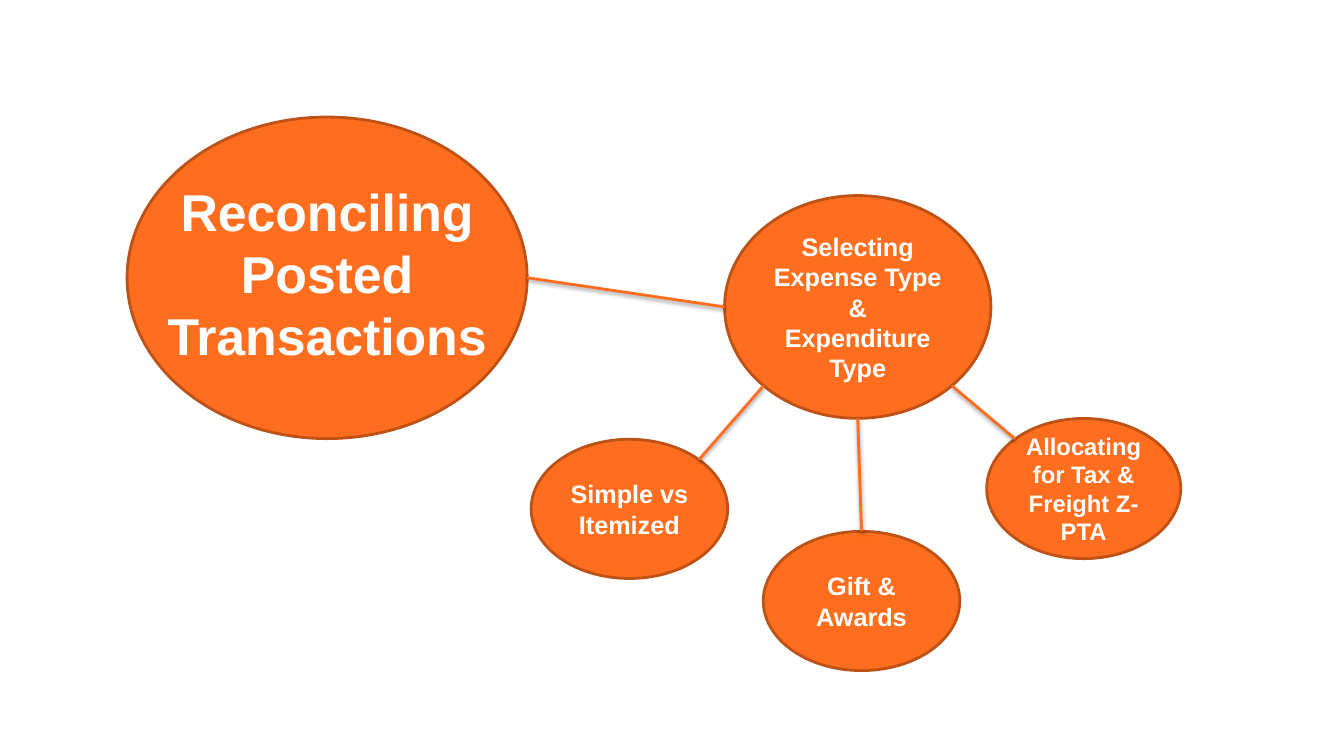
"""Build a bubble map of the steps for reconciling posted transactions."""
import math

import lxml.etree
import pptx
import pptx.dml.color
import pptx.enum.shapes
import pptx.enum.text
import pptx.oxml.ns
import pptx.util

TITLE = "Reconciling Posted Transactions"
TITLE_BOX = (110.2, 124.6, 247, 141.8)

BUBBLES = {
    "main": ("", (90.8, 83.6, 285.8, 229.7), "body"),
    "types": ("Selecting Expense Type & Expenditure Type", (517.6, 139.7, 190.2, 159.1), "body"),
    "itemized": ("Simple vs Itemized", (379.4, 313.8, 140.4, 99.4), "body"),
    "gifts": ("Gift & Awards", (545.2, 379.6, 140.4, 99.4), "body"),
    "allocating": ("Allocating for Tax & Freight Z-PTA", (704.8, 298.9, 138.6, 100.1), "small"),
}

LINKS = [
    ("main", "right", "types", "left"),
    ("types", "bottom left", "itemized", "top right"),
    ("types", "bottom right", "allocating", "top left"),
    ("gifts", "top", "types", "bottom"),
]

SITES = ["top", "top left", "left", "bottom left", "bottom", "bottom right", "right", "top right"]

THEME = {
    "font": "Arial",
    "fill": "FF6E1E",
    "outline": "BD5116",
    "text": "FFFFFF",
    "shadow": "000000",
    "line": 2,
    "sizes": {"title": 37, "body": 18, "small": 17},
}

Pt = pptx.util.Pt
qn = pptx.oxml.ns.qn


def color(name):
    return pptx.dml.color.RGBColor.from_string(THEME[name])


def write(tf, text, size, anchor):
    tf.word_wrap = True
    tf.vertical_anchor = anchor
    p = tf.paragraphs[0]
    p.alignment = pptx.enum.text.PP_ALIGN.CENTER
    r = p.add_run()
    r.text = text
    r.font.name = THEME["font"]
    r.font.size = Pt(THEME["sizes"][size])
    r.font.bold = True
    r.font.color.rgb = color("text")


def add_bubble(s, text, box, size):
    sp = s.shapes.add_shape(pptx.enum.shapes.MSO_SHAPE.OVAL, *map(Pt, box))
    sp.shadow.inherit = False
    sp.fill.solid()
    sp.fill.fore_color.rgb = color("fill")
    sp.line.color.rgb = color("outline")
    sp.line.width = Pt(THEME["line"])
    if text:
        write(sp.text_frame, text, size, pptx.enum.text.MSO_ANCHOR.MIDDLE)
    return sp


def site_point(box, site):
    x, y, w, h = box
    angle = math.radians(45 * SITES.index(site))
    return Pt(x + w / 2 * (1 - math.sin(angle))), Pt(y + h / 2 * (1 - math.cos(angle)))


def add_shadow(cxn):
    effects = lxml.etree.SubElement(cxn._element.spPr, qn("a:effectLst"))
    shadow = lxml.etree.SubElement(
        effects, qn("a:outerShdw"), blurRad=str(Pt(3.1)), dist=str(Pt(1.6)),
        dir="5400000", rotWithShape="0")
    tint = lxml.etree.SubElement(shadow, qn("a:srgbClr"), val=THEME["shadow"])
    lxml.etree.SubElement(tint, qn("a:alpha"), val="38000")


def add_link(s, shapes, start, start_site, end, end_site):
    cxn = s.shapes.add_connector(
        pptx.enum.shapes.MSO_CONNECTOR.STRAIGHT,
        *site_point(BUBBLES[start][1], start_site),
        *site_point(BUBBLES[end][1], end_site))
    cxn.line.color.rgb = color("fill")
    cxn.line.width = Pt(THEME["line"])
    add_shadow(cxn)
    glue = cxn._element.nvCxnSpPr.cNvCxnSpPr
    for tag, name, site in (("a:stCxn", start, start_site), ("a:endCxn", end, end_site)):
        lxml.etree.SubElement(
            glue, qn(tag), id=str(shapes[name].shape_id), idx=str(SITES.index(site)))


def main():
    prs = pptx.Presentation()
    prs.slide_width, prs.slide_height = Pt(960), Pt(540)
    s = prs.slides.add_slide(prs.slide_layouts[6])
    shapes = {name: add_bubble(s, *bubble) for name, bubble in BUBBLES.items()}
    title = s.shapes.add_textbox(*map(Pt, TITLE_BOX))
    write(title.text_frame, TITLE, "title", pptx.enum.text.MSO_ANCHOR.TOP)
    for link in LINKS:
        add_link(s, shapes, *link)
    prs.save("out.pptx")


if __name__ == "__main__":
    main()
